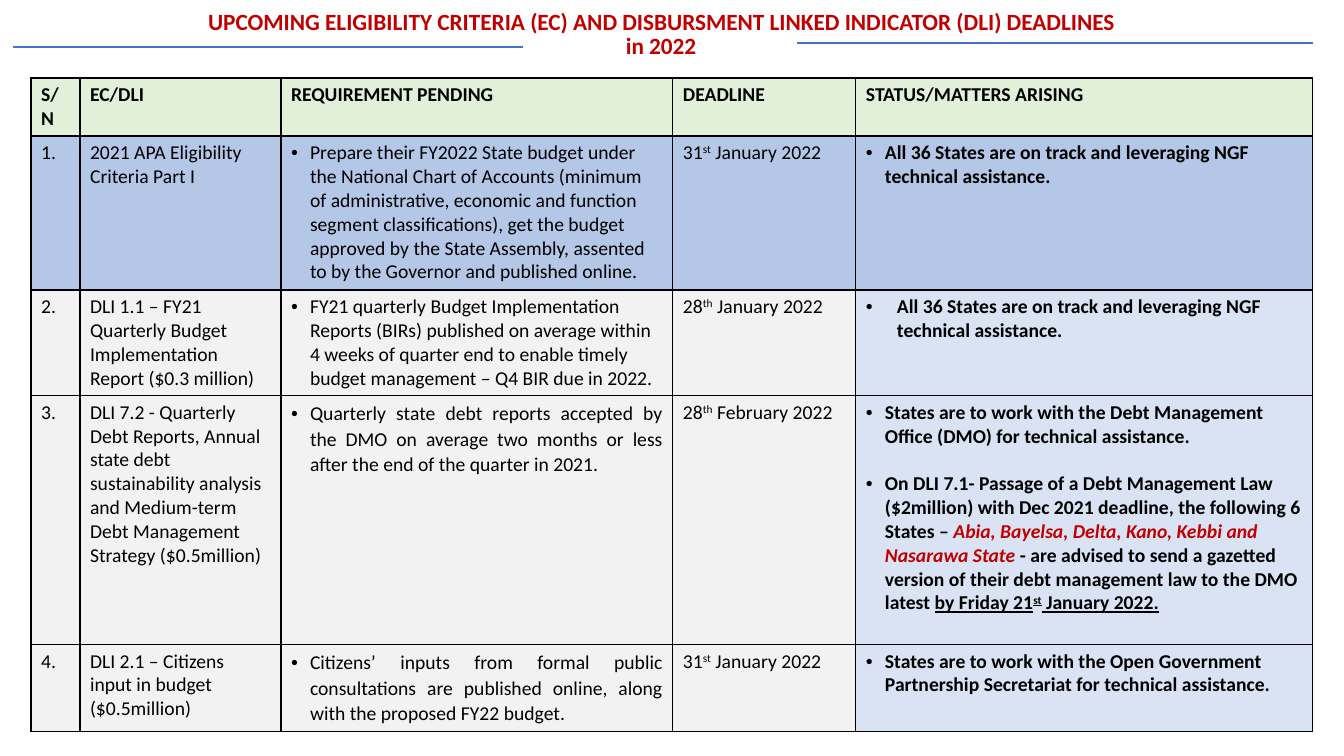
from dataclasses import dataclass

from lxml.etree import SubElement
from pptx import Presentation
from pptx.dml.color import RGBColor as Rgb
from pptx.enum.shapes import MSO_CONNECTOR as Link
from pptx.enum.text import MSO_ANCHOR as Anchor, PP_ALIGN as Align
from pptx.oxml import parse_xml
from pptx.oxml.ns import nsdecls, qn
from pptx.util import Emu, Pt


@dataclass(frozen=True)
class Theme:
    font: str = "Calibri"
    body: float = 14
    title: float = 16.6
    rule: float = 1.5
    edge: float = 1
    ink: str = "000000"
    red: str = "C00000"
    blue: str = "4472C4"
    green: str = "E2F0D9"
    sky: str = "B4C7E7"
    grey: str = "F2F2F2"
    pale: str = "DAE3F3"


@dataclass(frozen=True)
class Bit:
    text: str
    raised: bool = False
    named: bool = False
    under: bool = False


@dataclass(frozen=True)
class Para:
    bits: tuple[Bit, ...]
    indent: int = 0
    bold: bool = False
    wide: bool = False
    before: int = 0


@dataclass(frozen=True)
class Item:
    topic: str
    need: Para
    day: str
    suffix: str
    month: str
    status: tuple[Para, ...]
    fill: str
    tint: str
    height: int


@dataclass(frozen=True)
class Rule:
    left: int
    right: int
    y: int


THEME = Theme()
INDENT = 19
HEADS = ("S/N", "EC/DLI", "REQUIREMENT PENDING", "DEADLINE", "STATUS/MATTERS ARISING")
WIDTHS = (49, 201, 392, 183, 457)
HEAD_HEIGHT = 58
TITLE = "UPCOMING ELIGIBILITY CRITERIA (EC) AND DISBURSMENT LINKED INDICATOR (DLI) DEADLINES in 2022"
RULES = (Rule(13, 523, 47), Rule(797, 1313, 43))
ON_TRACK = "All 36 States are on track and leveraging NGF technical assistance."


def px(count: int) -> Emu:
    return Emu(round(count * 914400 / 100.8))


def plain(text: str, bold: bool = False) -> Para:
    return Para((Bit(text),), bold=bold)


def need(text: str, wide: bool = False) -> Para:
    return Para((Bit(text),), INDENT, wide=wide)


def status(*bits: Bit, indent: int = INDENT, before: int = 0) -> Para:
    return Para(bits, indent, bold=True, before=before)


ITEMS = (
    Item("2021 APA Eligibility Criteria Part I",
         need("Prepare their FY2022 State budget under the National Chart of Accounts "
              "(minimum of administrative, economic and function segment classifications), "
              "get the budget approved by the State Assembly, assented to by the Governor "
              "and published online."),
         "31", "st", "January", (status(Bit(ON_TRACK)),), THEME.sky, THEME.sky, 154),
    Item("DLI 1.1 – FY21 Quarterly Budget Implementation Report ($0.3 million)",
         need("FY21 quarterly Budget Implementation Reports (BIRs) published on average "
              "within 4 weeks of quarter end to enable timely budget management – "
              "Q4 BIR due in 2022."),
         "28", "th", "January", (status(Bit(ON_TRACK), indent=31),),
         THEME.grey, THEME.pale, 105),
    Item("DLI 7.2 - Quarterly Debt Reports, Annual state debt sustainability analysis "
         "and Medium-term Debt Management Strategy ($0.5million)",
         need("Quarterly state debt reports accepted by the DMO on average two months "
              "or less after the end of the quarter in 2021.", wide=True),
         "28", "th", "February",
         (status(Bit("States are to work with the Debt Management Office (DMO) for "
                     "technical assistance.")),
          status(Bit("On DLI 7.1- Passage of a Debt Management Law ($2million) with "
                     "Dec 2021 deadline, the following 6 States – "),
                 Bit("Abia, Bayelsa, Delta, Kano, Kebbi and Nasarawa State ", named=True),
                 Bit("- are advised to send a gazetted version of their debt "
                     "management law to the DMO latest "),
                 Bit("by Friday 21", under=True),
                 Bit("st", raised=True, under=True),
                 Bit(" January 2022.", under=True), before=17)),
         THEME.grey, THEME.pale, 249),
    Item("DLI 2.1 – Citizens input in budget ($0.5million)",
         need("Citizens’ inputs from formal public consultations are published online, "
              "along with the proposed FY22 budget.", wide=True),
         "31", "st", "January",
         (status(Bit("States are to work with the Open Government Partnership "
                     "Secretariat for technical assistance.")),),
         THEME.grey, THEME.pale, 86),
)


def style(font, size: float, color: str, bold: bool) -> None:
    font.name, font.size, font.bold = THEME.font, Pt(size), bold
    font.color.rgb = Rgb.from_string(color)


def write(target, para: Para) -> None:
    """Fill one paragraph with its runs, bullet and spacing."""
    if para.indent:
        props = target._p.get_or_add_pPr()
        props.set("marL", str(px(para.indent)))
        props.set("indent", str(-px(para.indent)))
        SubElement(props, qn("a:buFont"), typeface="Arial")
        SubElement(props, qn("a:buChar"), char="•")
    if para.wide:
        target.alignment = Align.JUSTIFY
        target.line_spacing, target.space_after = 1.07, Pt(8)
    if para.before:
        target.space_before = Pt(para.before)
    for bit in para.bits:
        run = target.add_run()
        run.text = bit.text
        style(run.font, THEME.body, THEME.red if bit.named else THEME.ink, para.bold)
        if bit.named:
            run.font.italic = True
        if bit.under:
            run.font.underline = True
        if bit.raised:
            run._r.get_or_add_rPr().set("baseline", "30000")


def paint(cell, paras: tuple[Para, ...], fill: str) -> None:
    """Give a cell its fill, borders and paragraphs."""
    cell.fill.solid()
    cell.fill.fore_color.rgb = Rgb.from_string(fill)
    props = cell._tc.get_or_add_tcPr()
    for spot, side in enumerate(("lnL", "lnR", "lnT", "lnB")):
        props.insert(spot, parse_xml(
            f'<a:{side} {nsdecls("a")} w="{Pt(THEME.edge)}"><a:solidFill>'
            f'<a:srgbClr val="{THEME.ink}"/></a:solidFill></a:{side}>'))
    frame = cell.text_frame
    for spot, para in enumerate(paras):
        write(frame.add_paragraph() if spot else frame.paragraphs[0], para)


def add_grid(slide) -> None:
    heights = (HEAD_HEIGHT, *(item.height for item in ITEMS))
    grid = slide.shapes.add_table(len(heights), len(WIDTHS), px(31), px(78),
                                  px(sum(WIDTHS)), px(sum(heights))).table
    grid.first_row = grid.horz_banding = False
    for column, width in zip(grid.columns, WIDTHS):
        column.width = px(width)
    for row, height in zip(grid.rows, heights):
        row.height = px(height)
    for col, head in enumerate(HEADS):
        paint(grid.cell(0, col), (plain(head, bold=True),), THEME.green)
    for row, item in enumerate(ITEMS, 1):
        due = Para((Bit(item.day), Bit(item.suffix, raised=True), Bit(f" {item.month} 2022")))
        cells = ((plain(f"{row}."),), (plain(item.topic),), (item.need,), (due,), item.status)
        for col, paras in enumerate(cells):
            fill = item.tint if col == len(cells) - 1 else item.fill
            paint(grid.cell(row, col), paras, fill)


def add_title(slide) -> None:
    frame = slide.shapes.add_textbox(px(189), px(5), px(944), px(60)).text_frame
    frame.word_wrap, frame.vertical_anchor = True, Anchor.MIDDLE
    frame.text = TITLE
    line = frame.paragraphs[0]
    line.alignment, line.line_spacing = Align.CENTER, 0.86
    style(line.runs[0].font, THEME.title, THEME.red, True)


def add_rule(slide, rule: Rule) -> None:
    link = slide.shapes.add_connector(Link.STRAIGHT, px(rule.left), px(rule.y),
                                      px(rule.right), px(rule.y))
    link.line.color.rgb = Rgb.from_string(THEME.blue)
    link.line.width = Pt(THEME.rule)
    SubElement(link._element.spPr, qn("a:effectLst"))


def main() -> None:
    deck = Presentation()
    deck.slide_width, deck.slide_height = px(1344), px(756)
    slide = deck.slides.add_slide(deck.slide_layouts[6])
    add_grid(slide)
    add_title(slide)
    for rule in RULES:
        add_rule(slide, rule)
    deck.save("out.pptx")


if __name__ == "__main__":
    main()
